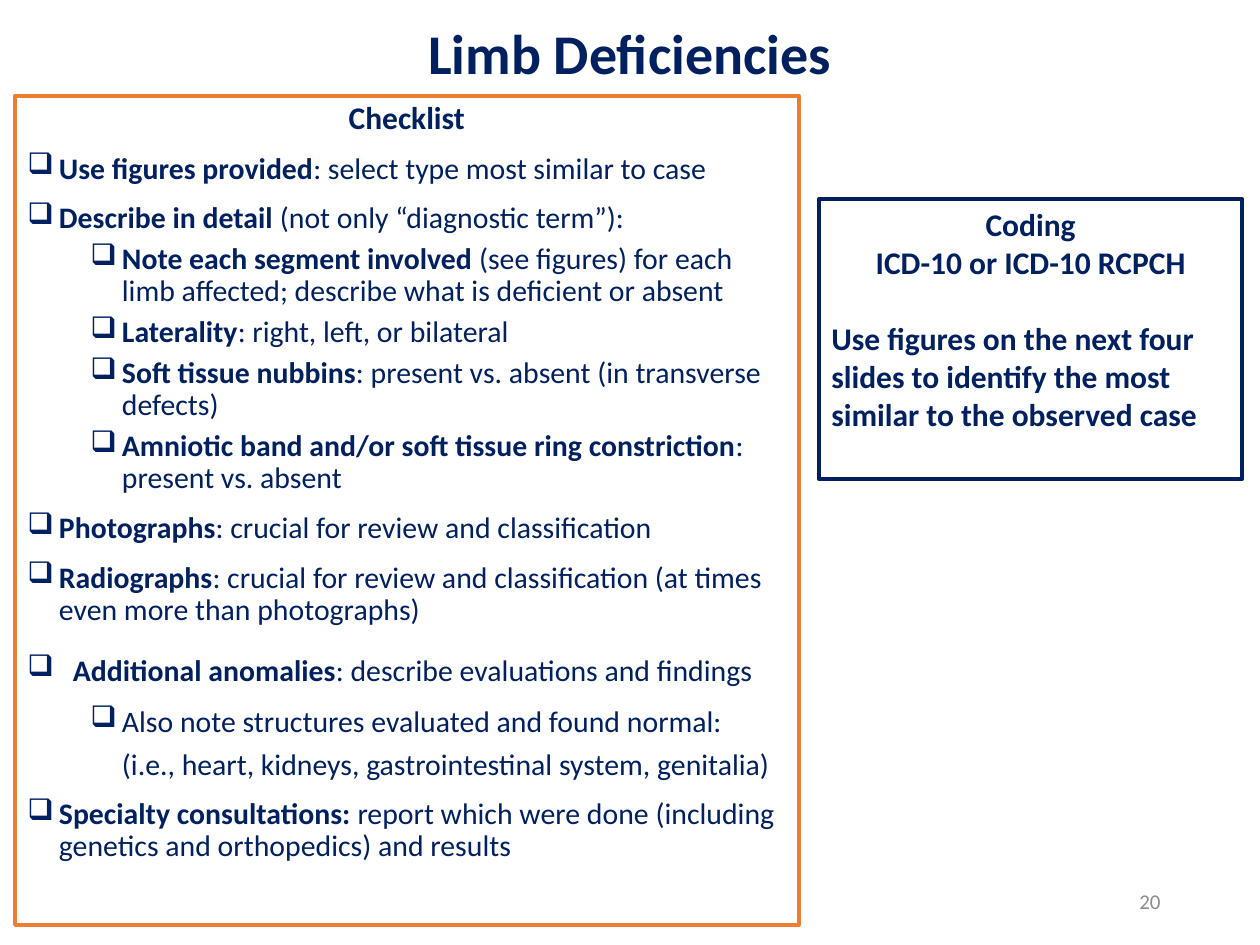
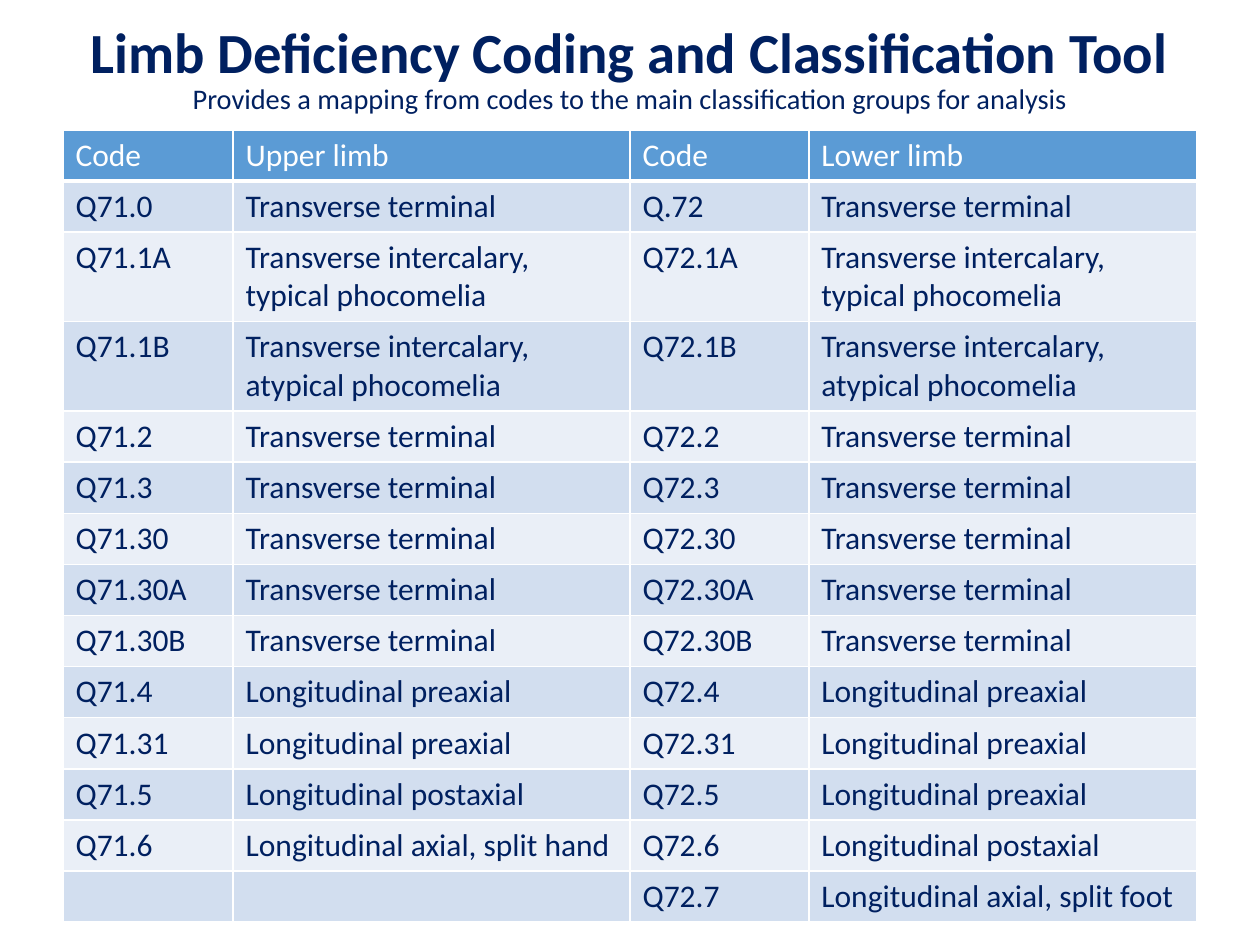
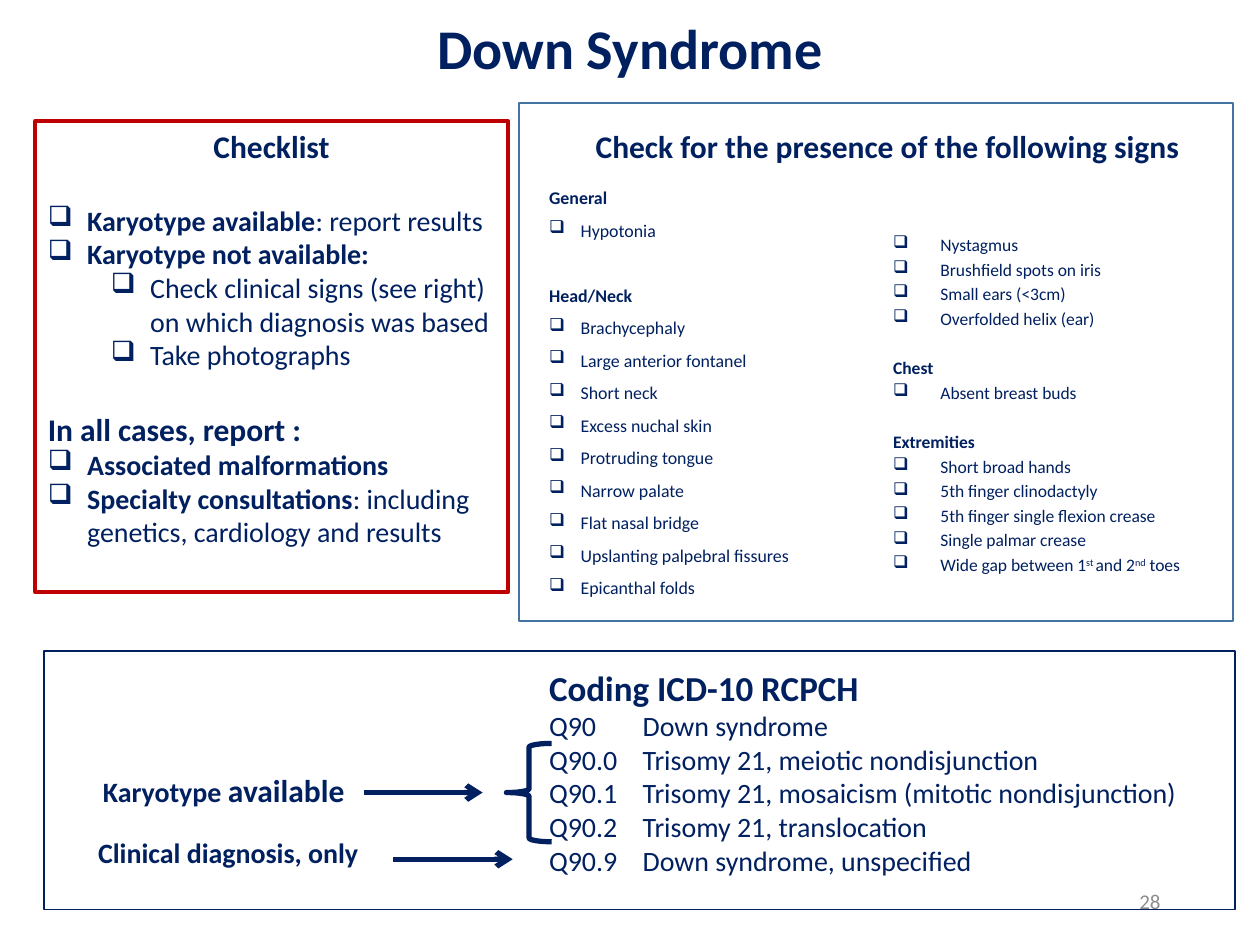
from lxml import etree
from pptx import Presentation
from pptx.dml.color import RGBColor
from pptx.enum import shapes, text
from pptx.oxml import ns
from pptx.util import Pt

NAVY = RGBColor(0x00, 0x20, 0x60)
ORANGE = RGBColor(0xED, 0x7D, 0x31)
RED = RGBColor(0xC0, 0x00, 0x00)
STEEL = RGBColor(0x43, 0x73, 0x9E)
GREY = RGBColor(0x8C, 0x8C, 0x8C)
WHITE = RGBColor(0xFF, 0xFF, 0xFF)
HEADER = RGBColor(0x5B, 0x9B, 0xD5)
BANDS = RGBColor(0xD2, 0xDE, 0xEF), RGBColor(0xEA, 0xEF, 0xF7)

FONT = "Calibri"
BULLET = "❑"
CENTER = text.PP_ALIGN.CENTER
RIGHT = text.PP_ALIGN.RIGHT
TOP = text.MSO_ANCHOR.TOP
MIDDLE = text.MSO_ANCHOR.MIDDLE
BOLD = {"bold": True}
SUPERSCRIPT = {"baseline": 30000}
NUMBER_BOX = (508.3, 500.4, 162, 28.8)


def add_child(parent, tag, **attributes):
    return etree.SubElement(parent, ns.qn(tag), attributes)


def inside(box, left, top, width=0, height=0):
    return box[0] + left, box[1] + top, width, height


def points(box):
    return [Pt(length) for length in box]


def set_values(target, values):
    for name, value in values.items():
        setattr(target, name, value)


def add_span(para, words, formats):
    span = para.add_run()
    span.text = words
    span.font.color.rgb = formats["color"]
    set_values(span.font, {"name": FONT, "size": Pt(formats["size"]),
                           "bold": formats.get("bold", False)})
    if "baseline" in formats:
        span.font._element.set("baseline", str(formats["baseline"]))


def indent(para, left, hang):
    para._p.get_or_add_pPr().set("marL", str(Pt(left)))
    para._p.get_or_add_pPr().set("indent", str(-Pt(hang)))


def write_para(para, words, size=16, color=NAVY, bold=False, mark=BOLD, bullet=None,
               tab=None, **layout):
    """Asterisks switch the mark formats on and off."""
    set_values(para, {"space_before": Pt(0), "alignment": text.PP_ALIGN.LEFT, **layout})
    if bullet:
        indent(para, *bullet)
        add_child(para._p.get_or_add_pPr(), "a:buChar", char=BULLET)
    if tab:
        stops = add_child(para._p.get_or_add_pPr(), "a:tabLst")
        add_child(stops, "a:tab", pos=str(Pt(tab)), algn="l")
    base = {"size": size, "color": color, "bold": bold}
    for index, part in enumerate(words.split("*")):
        formats = {**base, **mark} if index % 2 else base
        for row, line in enumerate(part.split("\v")):
            if row:
                para.add_line_break()
            if line:
                add_span(para, line, formats)


def write(frame, lines, anchor=TOP, wrap=True, **common):
    set_values(frame, {"word_wrap": wrap, "vertical_anchor": anchor,
                       "auto_size": text.MSO_AUTO_SIZE.NONE})
    for index, (words, formats) in enumerate(lines):
        para = frame.add_paragraph() if index else frame.paragraphs[0]
        write_para(para, words, **{**common, **formats})


def add_text(page, box, lines, **formats):
    write(page.shapes.add_textbox(*points(box)).text_frame, lines, **formats)


def add_outline(page, box, color, width, kind=shapes.MSO_SHAPE.RECTANGLE):
    outline = page.shapes.add_shape(kind, *points(box))
    outline.shadow.inherit = False
    outline.fill.background()
    outline.line.color.rgb = color
    outline.line.width = Pt(width)
    return outline


def add_arrow(page, box):
    left, top, width, height = points(box)
    arrow = page.shapes.add_connector(shapes.MSO_CONNECTOR.STRAIGHT,
                                      left, top, left + width, top + height)
    arrow.line.color.rgb = NAVY
    arrow.line.width = Pt(3)
    add_child(arrow.line._get_or_add_ln(), "a:tailEnd", type="arrow")
    add_child(arrow._element.spPr, "a:effectLst")


def add_page(deck, title, title_box, size=32, number=None):
    page = deck.slides.add_slide(deck.slide_layouts[5])
    heading = page.shapes.title
    set_values(heading, dict(zip(("left", "top", "width", "height"), points(title_box))))
    write(heading.text_frame, [(title, {})], anchor=MIDDLE, size=size, bold=True,
          mark={"size": size / 2, "bold": False}, alignment=CENTER, line_spacing=0.9)
    if number:
        add_text(page, NUMBER_BOX, [(number, {})], anchor=MIDDLE, size=12,
                 color=GREY, alignment=RIGHT)
    return page


def add_limb_checklist(page, box):
    item = {"bullet": (18, 18), "space_before": Pt(10)}
    detail = {"bullet": (54, 18), "space_before": Pt(5)}
    lines = [
        ("Checklist", {"size": 18, "bold": True, "alignment": CENTER, "space_before": Pt(10)}),
        ("*Use figures provided*: select type most similar to case", item),
        ("*Describe in detail *(not only “diagnostic term”):", item),
        ("*Note each segment involved* (see figures) for each limb affected; "
         "describe what is deficient or absent", detail),
        ("*Laterality*: right, left, or bilateral", detail),
        ("*Soft tissue nubbins*: present vs. absent (in transverse defects)", detail),
        ("*Amniotic band and/or soft tissue ring constriction*: present vs. absent", detail),
        ("*Photographs*: crucial for review and classification", item),
        ("*Radiographs*: crucial for review and classification "
         "(at times even more than photographs)", item),
        ("*Additional anomalies*: describe evaluations and findings",
         {**item, "bullet": (26, 26), "line_spacing": 1.2}),
        ("Also note structures evaluated and found normal:\v"
         "(i.e., heart, kidneys, gastrointestinal system, genitalia)",
         {**detail, "line_spacing": 1.2}),
        ("*Specialty consultations: *report which were done "
         "(including genetics and orthopedics) and results", item),
    ]
    panel = add_outline(page, box, ORANGE, 2.25)
    write(panel.text_frame, lines, size=17, line_spacing=0.9)


def add_limb_coding(page, box):
    lines = [
        ("Coding", {"alignment": CENTER}),
        ("ICD-10 or ICD-10 RCPCH", {"alignment": CENTER}),
        ("Use figures on the next four slides to identify the most similar "
         "to the observed case", {"space_before": Pt(22)}),
    ]
    write(add_outline(page, box, NAVY, 2.25).text_frame, lines, size=18, bold=True)


def style_cell(cell, words, fill, color, bottom):
    properties = cell._tc.get_or_add_tcPr()
    for side, width in (("L", 1), ("R", 1), ("T", 1), ("B", bottom)):
        border = add_child(properties, "a:ln" + side, w=str(Pt(width)))
        add_child(add_child(border, "a:solidFill"), "a:srgbClr", val=str(WHITE))
    cell.fill.solid()
    cell.fill.fore_color.rgb = fill
    write_para(cell.text_frame.paragraphs[0], words, size=18, color=color)


def add_code_table(page, box):
    terminal = "Transverse terminal"
    typical = "Transverse intercalary, typical phocomelia"
    atypical = "Transverse intercalary, atypical phocomelia"
    preaxial = "Longitudinal preaxial"
    postaxial = "Longitudinal postaxial"
    rows = [
        ("Code", "Upper limb", "Code", "Lower limb"),
        ("Q71.0", terminal, "Q.72", terminal),
        ("Q71.1A", typical, "Q72.1A", typical),
        ("Q71.1B", atypical, "Q72.1B", atypical),
        *[("Q71." + code, terminal, "Q72." + code, terminal)
          for code in ("2", "3", "30", "30A", "30B")],
        *[("Q71." + code, preaxial, "Q72." + code, preaxial) for code in ("4", "31")],
        ("Q71.5", postaxial, "Q72.5", preaxial),
        ("Q71.6", "Longitudinal axial, split hand", "Q72.6", postaxial),
        ("", "", "Q72.7", "Longitudinal axial, split foot"),
    ]
    widths = (97.2, 226.8, 102.2, 221.8)
    table = page.shapes.add_table(len(rows), len(widths), *points(box)).table
    for column, width in zip(table.columns, widths):
        column.width = Pt(width)
    for index, words in enumerate(rows):
        tall = typical in words or atypical in words
        table.rows[index].height = Pt(50.8 if tall else 29.2)
        look = (BANDS[(index - 1) % 2], NAVY, 1) if index else (HEADER, WHITE, 3)
        for column, value in enumerate(words):
            style_cell(table.cell(index, column), value, *look)


def add_down_checklist(page, box):
    item = {"bullet": (22.5, 22.5)}
    detail = {"bullet": (58.5, 22.5)}
    lines = [
        ("Checklist", {"size": 18, "bold": True, "alignment": CENTER}),
        ("*Karyotype available*: report results", {**item, "space_before": Pt(22)}),
        ("*Karyotype not available:*", item),
        ("Check clinical signs (see right) on which diagnosis was based", detail),
        ("Take photographs", detail),
        ("In all cases, report :", {"size": 18, "bold": True, "space_before": Pt(22)}),
        ("*Associated malformations*", item),
        ("*Specialty consultations*: including genetics, cardiology and results", item),
    ]
    write(add_outline(page, box, RED, 2.25).text_frame, lines)


def sign_lines(groups, bullet, gap, blank):
    lines = []
    for heading, signs in groups:
        before = Pt(gap + blank if lines else gap)
        if heading:
            lines.append((heading, {"bold": True, "space_before": before}))
        lines += [(sign, {"bullet": bullet, "space_before": Pt(gap)}) for sign in signs]
    return lines


def add_signs(page, box):
    general = [
        ("General", ["Hypotonia"]),
        ("Head/Neck", ["Brachycephaly", "Large anterior fontanel", "Short neck",
                       "Excess nuchal skin", "Protruding tongue", "Narrow palate",
                       "Flat nasal bridge", "Upslanting palpebral fissures",
                       "Epicanthal folds"]),
    ]
    other = [
        (None, ["Nystagmus", "Brushfield spots on iris", "Small ears (<3cm)",
                "Overfolded helix (ear)"]),
        ("Chest", ["Absent breast buds"]),
        ("Extremities", ["Short broad hands", "5th finger clinodactyly",
                         "5th finger single flexion crease", "Single palmar crease",
                         "Wide gap between 1*st *and 2*nd* toes"]),
    ]
    add_outline(page, box, STEEL, 1)
    add_text(page, inside(box, 36.7, 10.1, 350.6, 28.8),
             [("Check for the presence of the following signs", {})],
             wrap=False, size=18, bold=True)
    add_text(page, inside(box, 10.1, 47.6, 208.1, 240.5),
             sign_lines(general, (18, 18), 10, 18.6), size=10.2, line_spacing=0.7)
    add_text(page, inside(box, 206.7, 71.3, 180.7, 225.4),
             sign_lines(other, (27, 27), 2, 14.2), size=10, mark=SUPERSCRIPT)


def add_down_coding(page, box):
    codes = [
        ("Q90", "Down syndrome"),
        ("Q90.0", "Trisomy 21, meiotic nondisjunction"),
        ("Q90.1", "Trisomy 21, mosaicism (mitotic nondisjunction)"),
        ("Q90.2", "Trisomy 21, translocation"),
        ("Q90.9", "Down syndrome, unspecified"),
    ]
    lines = [("Coding ICD-10 RCPCH", {"size": 20, "bold": True})]
    lines += [("\t".join(code), {"tab": 53.5}) for code in codes]
    add_outline(page, box, NAVY, 1)
    add_text(page, inside(box, 23.8, 101.6, 175.7, 26.6),
             [("Clinical diagnosis, only", {})], bold=True)
    add_arrow(page, inside(box, 199.4, 118.8, 68.4))
    add_text(page, inside(box, 281.5, 2.2, 377.3, 133.2), lines, anchor=MIDDLE, wrap=False)
    add_text(page, inside(box, 26.6, 64.8, 158.4, 28.8),
             [("Karyotype *available*", {})], bold=True, mark={"size": 18})
    add_arrow(page, inside(box, 182.9, 80.7, 67.7))
    add_outline(page, inside(box, 264.2, 52.6, 25.9, 56.2), NAVY, 3,
                shapes.MSO_SHAPE.LEFT_BRACE)


def main():
    deck = Presentation()
    deck.slide_width, deck.slide_height = Pt(720), Pt(540)

    limbs = add_page(deck, "Limb Deficiencies", (36, 3.6, 648, 56.9), number="20")
    add_limb_checklist(limbs, (8.6, 54.7, 447.8, 473.8))
    add_limb_coding(limbs, (468, 113.8, 241.9, 159.8))

    tool = add_page(deck, "Limb Deficiency Coding and Classification Tool\v"
                    "*Provides a mapping from codes to the main classification groups "
                    "for analysis*", (36, 9.4, 647.3, 61.2), size=32.4)
    add_code_table(tool, (36, 74.2, 648, 451.4))

    down = add_page(deck, "Down Syndrome", (36, 2.9, 648, 53.3), number="28")
    add_down_checklist(down, (20.2, 69.1, 270, 269.3))
    add_signs(down, (296.6, 59, 408.2, 295.9))
    add_down_coding(down, (25.2, 372.2, 680.4, 147.6))

    deck.save("out.pptx")


if __name__ == "__main__":
    main()
